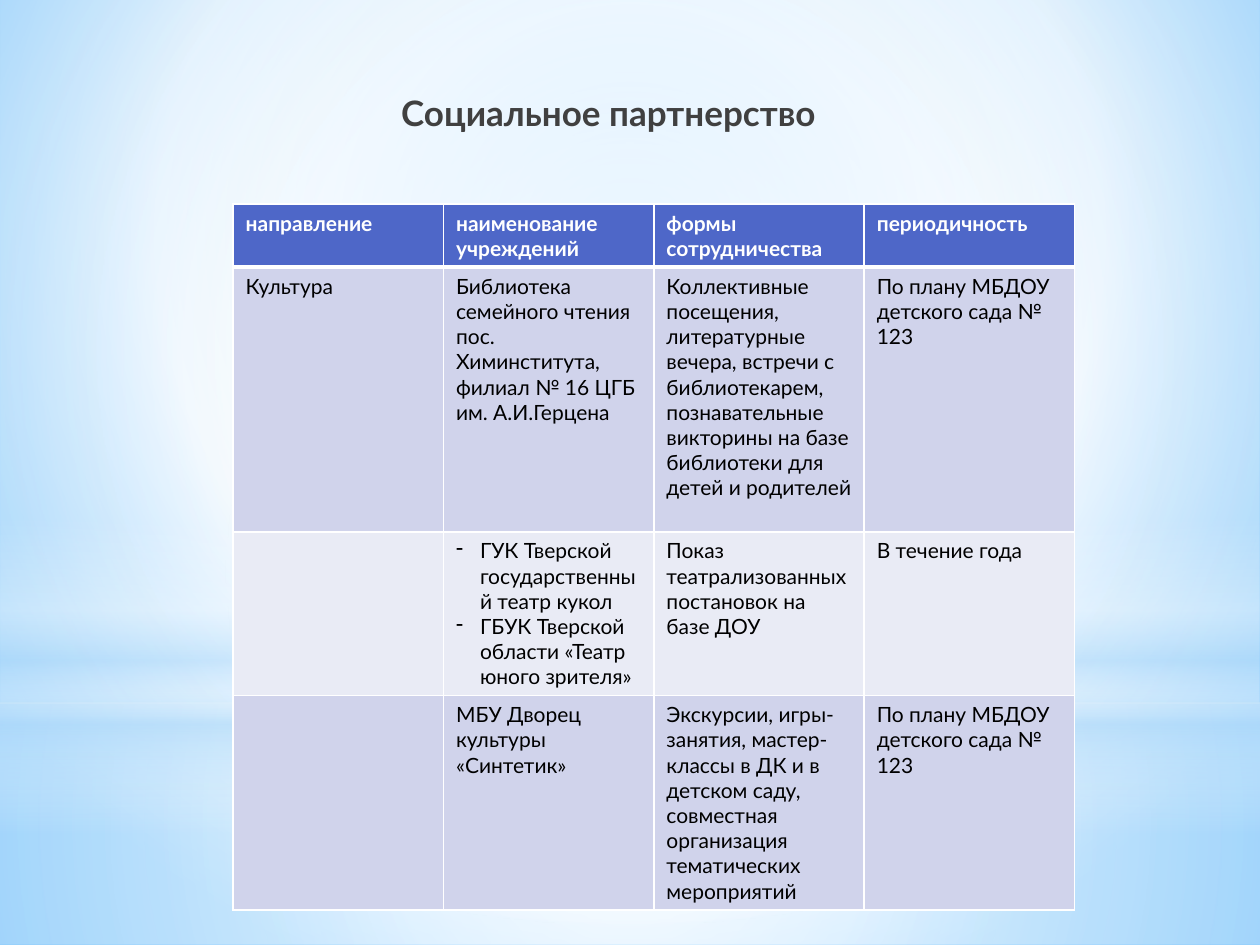
from lxml.etree import SubElement
from pptx import Presentation
from pptx.dml.color import RGBColor
from pptx.enum.shapes import MSO_SHAPE
from pptx.enum.text import MSO_ANCHOR, PP_ALIGN
from pptx.oxml.ns import qn
from pptx.util import Inches, Pt

FONT = "Lato"
HEADER_FILL = "4E67C8"
BAND_FILLS = ["D0D3EB", "E9EBF5"]
COLUMN_WIDTH = 1.67
ROW_HEIGHTS = [0.49, 2.1, 1.3, 1.7]
CENTER = (50, 50, 50, 50)
SCHEDULE = "По плану МБДОУ детского сада № 123"
ROWS = [
    ["направление", "наименование учреждений", "формы сотрудничества", "периодичность"],
    ["Культура",
     "Библиотека семейного чтения пос. Химинститута, филиал № 16 ЦГБ им. А.И.Герцена",
     "Коллективные посещения, литературные вечера, встречи с библиотекарем, "
     "познавательные викторины на базе библиотеки для детей и родителей",
     SCHEDULE],
    ["",
     ["ГУК Тверской государственный театр кукол",
      "ГБУК Тверской области «Театр юного зрителя»"],
     "Показ театрализованных постановок на базе ДОУ",
     "В течение года"],
    ["",
     "МБУ Дворец культуры «Синтетик»",
     "Экскурсии, игры-занятия, мастер-классы в ДК и в детском саду, "
     "совместная организация тематических мероприятий",
     SCHEDULE],
]
SKY_STOPS = [(0, "9ED5FF", 100), (60, "FFFFFF", 100), (100, "5BB9FF", 100)]
GLOWS = [
    (MSO_SHAPE.RECTANGLE, 5.58, 1.92,
     [(0, "FFFFFF", 91), (37, "FFFFFF", 76), (100, "B4DCFA", 79)], CENTER),
    (MSO_SHAPE.RECTANGLE, 0, 5.58,
     [(0, "FFFFFF", 89), (48, "FFFFFF", 62), (100, "B4DCFA", 79)], CENTER),
    (MSO_SHAPE.RECTANGLE, 4.12, 2.5,
     [(0, "FFFFFF", 0), (29, "FFFFFF", 30), (45, "B4DCFA", 40),
      (55, "FFFFFF", 26), (65, "B4DCFA", 60), (100, "FFFFFF", 0)], None),
    (MSO_SHAPE.OVAL, 1.75, 5.58, [(0, "FFFFFF", 100), (56, "FFFFFF", 0)], CENTER),
]


def color(value):
    """Turn a hex string into a colour."""
    return RGBColor.from_string(value)


def set_gradient(fill, owner, stops, focus=None):
    """Give a fill circular stops around a focus, or vertical stops without one."""
    fill.gradient()
    gradient = owner.find(".//" + qn("a:gradFill"))
    for child in list(gradient):
        gradient.remove(child)
    stop_list = SubElement(gradient, qn("a:gsLst"))
    for position, value, opacity in stops:
        stop = SubElement(stop_list, qn("a:gs"), pos=str(position * 1000))
        shade = SubElement(stop, qn("a:srgbClr"), val=value)
        if opacity < 100:
            SubElement(shade, qn("a:alpha"), val=str(opacity * 1000))
    if focus:
        circle = SubElement(gradient, qn("a:path"), path="circle")
        sides = {side: str(share * 1000) for side, share in zip("ltrb", focus)}
        SubElement(circle, qn("a:fillToRect"), **sides)
    else:
        SubElement(gradient, qn("a:lin"), ang="5400000", scaled="0")


def add_glow(page, kind, top, height, stops, focus):
    """Add a full-width soft gradient shape."""
    shape = page.shapes.add_shape(kind, 0, Inches(top), Inches(10), Inches(height))
    shape.shadow.inherit = False
    shape.line.fill.background()
    set_gradient(shape.fill, shape.element.spPr, stops, focus)


def write_text(para, text, size=12, bold=False, ink="000000"):
    """Write one formatted span into a paragraph."""
    span = para.add_run()
    span.text = text
    span.font.name = FONT
    span.font.size = Pt(size)
    span.font.bold = bold
    span.font.color.rgb = color(ink)


def add_title(page, text):
    """Format the title placeholder and lift it above the background."""
    title = page.shapes.title
    title.left, title.top = Inches(0.51), Inches(0.68)
    title.width, title.height = Inches(8.98), Inches(6.93)
    frame = title.text_frame
    frame.word_wrap = True
    frame.vertical_anchor = MSO_ANCHOR.TOP
    frame.margin_right = Inches(0.44)
    para = frame.paragraphs[0]
    para.alignment = PP_ALIGN.CENTER
    write_text(para, text, size=20, bold=True, ink="404040")
    title.element.getparent().append(title.element)


def set_dash(para):
    """Give a paragraph a hanging dash bullet."""
    properties = para._p.get_or_add_pPr()
    indent = Inches(0.19)
    properties.set("marL", str(indent))
    properties.set("indent", str(-indent))
    SubElement(properties, qn("a:buChar"), char="-")


def set_borders(cell, widths):
    """Draw white cell borders with a width in points for each side."""
    properties = cell._tc.get_or_add_tcPr()
    for index, (side, width) in enumerate(widths.items()):
        line = SubElement(properties, qn("a:ln" + side), w=str(Pt(width)))
        fill = SubElement(line, qn("a:solidFill"))
        SubElement(fill, qn("a:srgbClr"), val="FFFFFF")
        properties.insert(index, line)


def fill_cell(cell, content, row):
    """Fill a cell with text, or with a dashed list, in its row style."""
    header = row == 0
    cell.fill.solid()
    cell.fill.fore_color.rgb = color(HEADER_FILL if header else BAND_FILLS[(row - 1) % 2])
    set_borders(cell, {"L": 1, "R": 1, "T": 3 if row == 1 else 1, "B": 3 if header else 1})
    dashed = isinstance(content, list)
    frame = cell.text_frame
    for index, text in enumerate(content if dashed else [content]):
        para = frame.add_paragraph() if index else frame.paragraphs[0]
        para.font.size = Pt(12)
        if dashed:
            set_dash(para)
        if text:
            write_text(para, text, bold=header, ink="FFFFFF" if header else "000000")


def add_partner_table(page):
    """Add the table of partner institutions."""
    columns = len(ROWS[0])
    frame = page.shapes.add_table(len(ROWS), columns, Inches(1.85), Inches(1.62),
                                  Inches(COLUMN_WIDTH * columns), Inches(sum(ROW_HEIGHTS)))
    table = frame.table
    table.first_row = False
    table.horz_banding = False
    for column in table.columns:
        column.width = Inches(COLUMN_WIDTH)
    for row, (height, contents) in enumerate(zip(ROW_HEIGHTS, ROWS)):
        table.rows[row].height = Inches(height)
        for column, content in enumerate(contents):
            fill_cell(table.cell(row, column), content, row)


def main():
    """Build the social partnership slide."""
    deck = Presentation()
    deck.slide_width, deck.slide_height = Inches(10), Inches(7.5)
    page = deck.slides.add_slide(deck.slide_layouts[5])
    set_gradient(page.background.fill, page.element, SKY_STOPS, (20, 10, 20, 60))
    for glow in GLOWS:
        add_glow(page, *glow)
    add_title(page, "Социальное партнерство")
    add_partner_table(page)
    deck.save("out.pptx")


if __name__ == "__main__":
    main()
